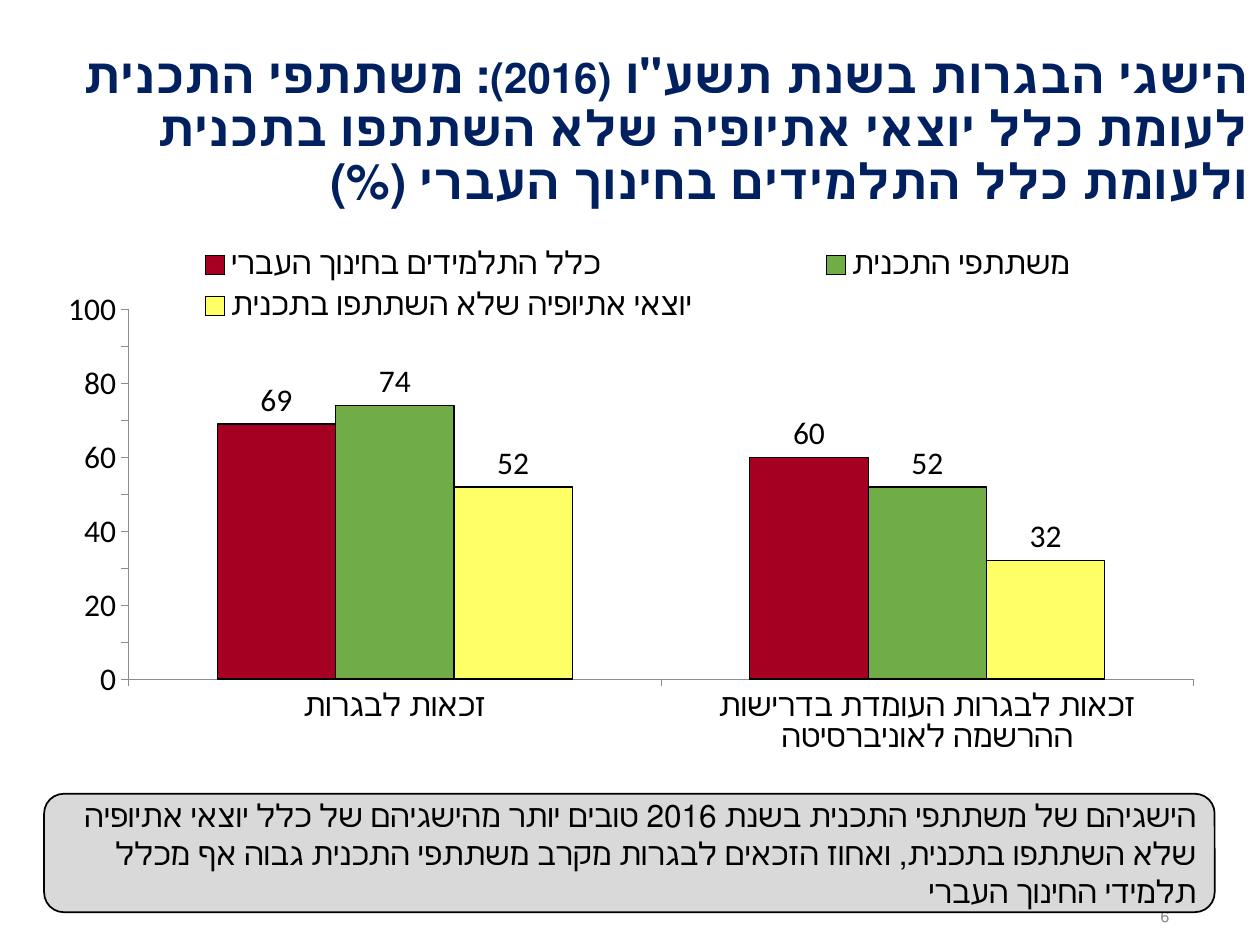
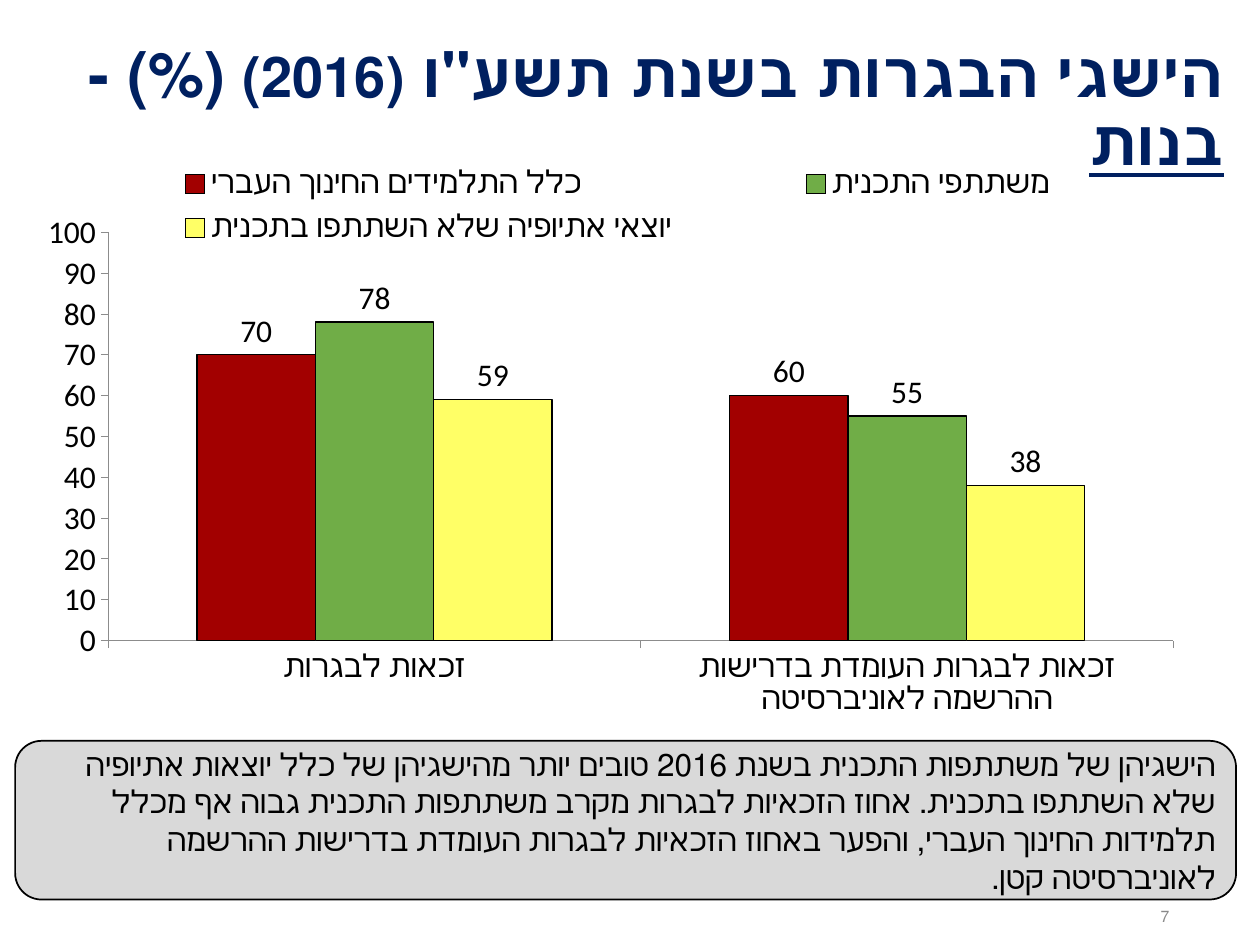
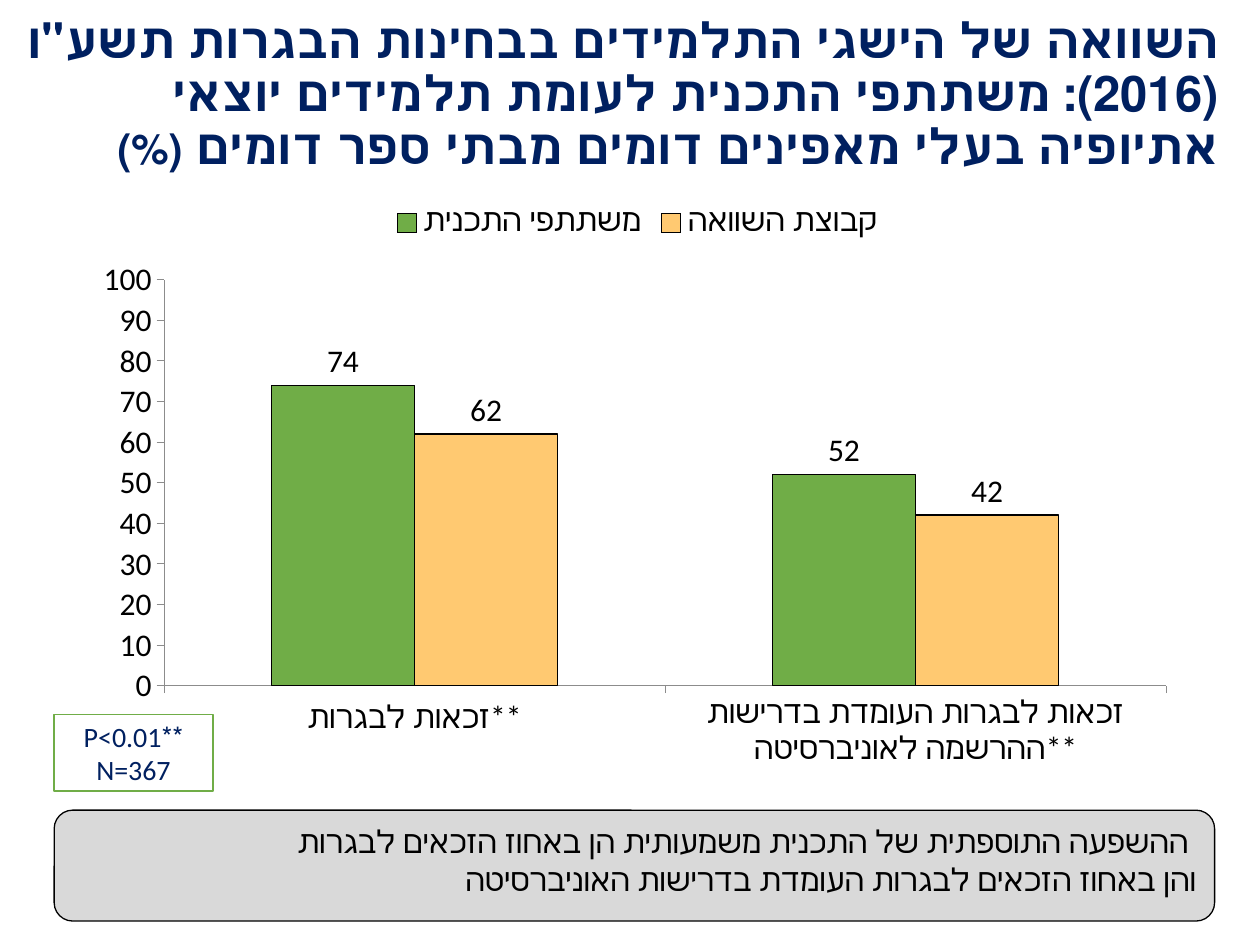
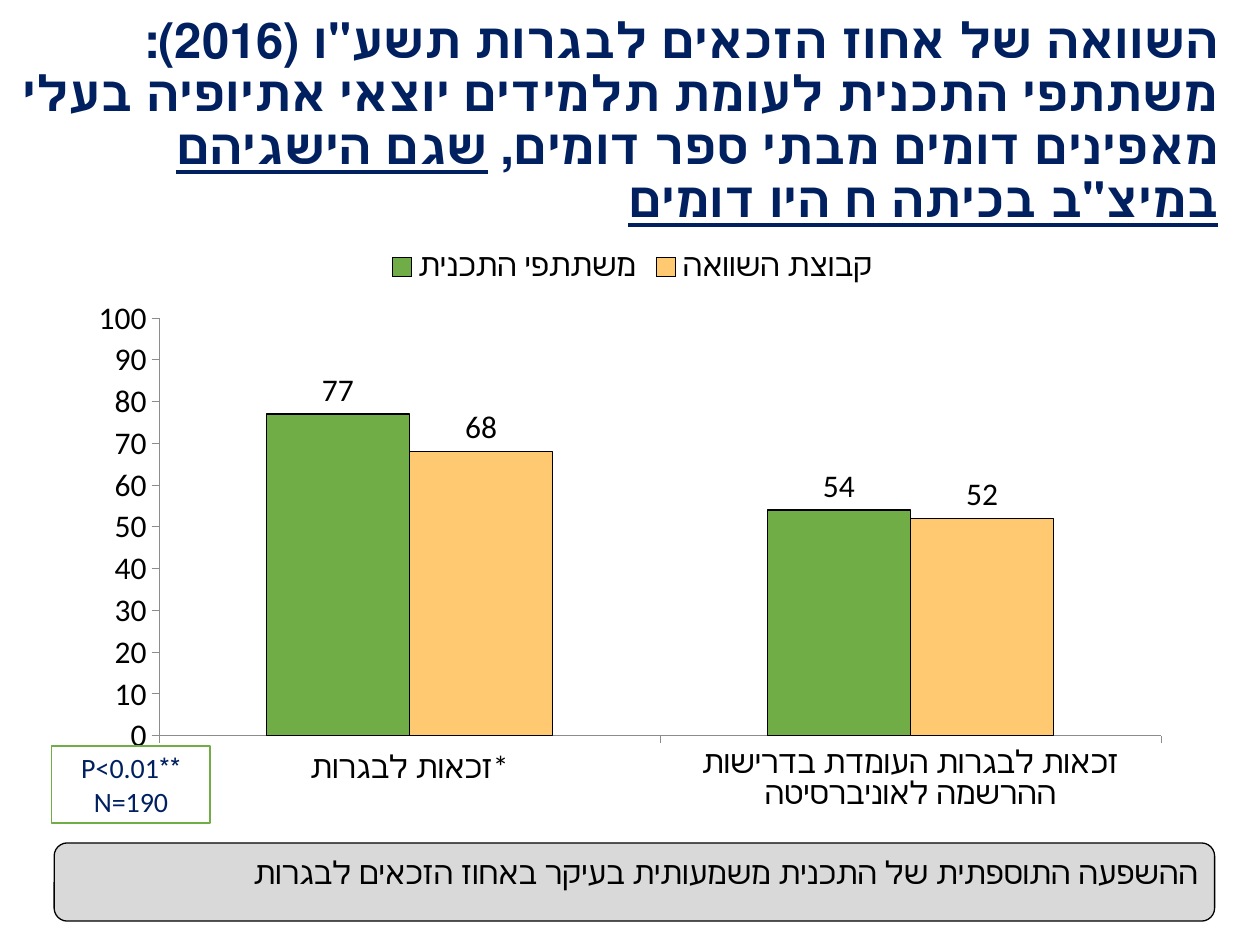
from dataclasses import dataclass
from typing import NamedTuple

from pptx import Presentation
from pptx.chart.data import CategoryChartData
from pptx.dml.color import RGBColor
from pptx.enum.chart import XL_CHART_TYPE as ChartType
from pptx.enum.chart import XL_LABEL_POSITION as LabelPosition
from pptx.enum.chart import XL_LEGEND_POSITION as LegendPosition
from pptx.enum.chart import XL_TICK_MARK as TickMark
from pptx.enum.lang import MSO_LANGUAGE_ID as Language
from pptx.enum.shapes import MSO_SHAPE as Preset
from pptx.enum.text import MSO_ANCHOR as Anchor
from pptx.enum.text import PP_ALIGN as Align
from pptx.oxml import parse_xml
from pptx.oxml.ns import nsdecls, qn
from pptx.util import Emu, Pt

EMU_PER_PX = 9144


def px(length: int) -> Emu:
    return Emu(length * EMU_PER_PX)


@dataclass(frozen=True)
class Style:
    size: int
    face: str
    color: str
    bold: bool = False


@dataclass(frozen=True)
class Theme:
    navy: str = "002060"
    black: str = "000000"
    white: str = "FFFFFF"
    gray: str = "D9D9D9"
    axis: str = "8C8C8C"
    faint: str = "898989"
    crimson: str = "A50021"
    red: str = "A20000"
    green: str = "70AD47"
    yellow: str = "FFFF66"
    orange: str = "FFC971"
    title_face: str = "Times New Roman"
    body_face: str = "Calibri"
    number_face: str = "Arial"
    title_size: int = 28
    body_size: int = 18
    note_size: int = 16
    number_size: int = 9


THEME = Theme()
BODY = Style(THEME.body_size, THEME.body_face, THEME.black)
CLOSING = Style(THEME.body_size, THEME.title_face, THEME.black)
NOTE = Style(THEME.note_size, THEME.body_face, THEME.navy)
NUMBER = Style(THEME.number_size, THEME.number_face, THEME.faint)


class Area(NamedTuple):
    left: int
    top: int
    width: int
    height: int

    def emu(self) -> list[Emu]:
        return [px(length) for length in self]


class Layout(NamedTuple):
    x: float
    y: float
    w: float
    h: float


class Span(NamedTuple):
    text: str
    size: int = THEME.title_size
    underline: bool = False


class Series(NamedTuple):
    name: str
    values: tuple[int, ...]
    color: str


class Bars(NamedTuple):
    area: Area
    plot: Layout
    categories: tuple[str, ...]
    series: tuple[Series, ...]
    legend: Layout | None = None


class Panel(NamedTuple):
    area: Area
    paragraphs: tuple[str, ...]
    style: Style
    preset: Preset = Preset.ROUNDED_RECTANGLE
    fill: str = THEME.gray
    line: str = THEME.black
    line_width: float = 1
    align: Align = Align.RIGHT
    anchor: Anchor = Anchor.MIDDLE
    rtl: bool = True
    wrap: bool = True


class Page(NamedTuple):
    title_area: Area
    title: tuple[Span, ...]
    bars: Bars
    panels: tuple[Panel, ...]
    number: str = ""


def rgb(color: str) -> RGBColor:
    return RGBColor.from_string(color)


def style_font(font, style: Style) -> None:
    font.size = Pt(style.size)
    font.bold = style.bold
    font.color.rgb = rgb(style.color)
    font.name = style.face
    font.language_id = Language.HEBREW


def set_direction(para, align: Align, rtl: bool) -> None:
    para.alignment = align
    para._p.get_or_add_pPr().set("rtl", "1" if rtl else "0")


def add_span(para, text: str, style: Style, underline: bool = False) -> None:
    span = para.add_run()
    span.text = text
    if underline:
        span.font.underline = True
    style_font(span.font, style)


def add_title(slide, area: Area, spans: tuple[Span, ...]) -> None:
    frame = slide.shapes.add_textbox(*area.emu()).text_frame
    frame.word_wrap = True
    para = frame.paragraphs[0]
    set_direction(para, Align.RIGHT, True)
    para.line_spacing = 0.9
    for span in spans:
        style = Style(span.size, THEME.title_face, THEME.navy, True)
        add_span(para, span.text, style, span.underline)


def add_number(slide, number: str) -> None:
    frame = slide.shapes.add_textbox(*Area(713, 707, 225, 40).emu()).text_frame
    frame.word_wrap = True
    frame.vertical_anchor = Anchor.MIDDLE
    set_direction(frame.paragraphs[0], Align.RIGHT, True)
    add_span(frame.paragraphs[0], number, NUMBER)


def add_panel(slide, panel: Panel) -> None:
    box = slide.shapes.add_shape(panel.preset, *panel.area.emu())
    box.shadow.inherit = False
    box.fill.solid()
    box.fill.fore_color.rgb = rgb(panel.fill)
    box.line.color.rgb = rgb(panel.line)
    box.line.width = Pt(panel.line_width)
    frame = box.text_frame
    frame.word_wrap = panel.wrap
    frame.vertical_anchor = panel.anchor
    for index, text in enumerate(panel.paragraphs):
        para = frame.add_paragraph() if index else frame.paragraphs[0]
        set_direction(para, panel.align, panel.rtl)
        add_span(para, text, panel.style)


def layout_xml(layout: Layout, inner: bool):
    target = '<c:layoutTarget val="inner"/>' if inner else ""
    modes = "".join(f'<c:{side}Mode val="edge"/>' for side in "xy")
    sizes = "".join(f'<c:{side} val="{value}"/>' for side, value in layout._asdict().items())
    return parse_xml(
        f'<c:layout {nsdecls("c")}><c:manualLayout>{target}{modes}{sizes}</c:manualLayout></c:layout>'
    )


def place_plot(chart, layout: Layout) -> None:
    plot_area = chart._chartSpace.chart.plotArea
    for old in plot_area.findall(qn("c:layout")):
        plot_area.remove(old)
    plot_area.insert(0, layout_xml(layout, True))


def place_legend(chart, layout: Layout) -> None:
    legend = chart.legend._element
    for old in legend.findall(qn("c:layout")):
        legend.remove(old)
    legend.find(qn("c:legendPos")).addnext(layout_xml(layout, False))


def style_axis(axis) -> None:
    axis.has_major_gridlines = False
    axis.major_tick_mark = TickMark.OUTSIDE
    axis.minor_tick_mark = TickMark.NONE
    axis.format.line.color.rgb = rgb(THEME.axis)
    axis.format.line.width = Pt(0.5)
    style_font(axis.tick_labels.font, BODY)


def add_bars(slide, bars: Bars) -> None:
    data = CategoryChartData(number_format="General")
    data.categories = bars.categories
    for series in bars.series:
        data.add_series(series.name, series.values)
    chart = slide.shapes.add_chart(ChartType.COLUMN_CLUSTERED, *bars.area.emu(), data).chart
    chart.has_title = False
    style_font(chart.font, BODY)

    style_axis(chart.category_axis)
    style_axis(chart.value_axis)
    chart.value_axis.minimum_scale = 0
    chart.value_axis.maximum_scale = 100
    chart.value_axis.major_unit = 10

    plot = chart.plots[0]
    plot.gap_width = 150
    plot.overlap = 0
    plot.vary_by_categories = False
    for drawn, series in zip(plot.series, bars.series):
        drawn.format.fill.solid()
        drawn.format.fill.fore_color.rgb = rgb(series.color)
        drawn.format.line.color.rgb = rgb(THEME.black)
        drawn.format.line.width = Pt(0.75)
        labels = drawn.data_labels
        labels.show_value = True
        labels.position = LabelPosition.OUTSIDE_END
        style_font(labels.font, BODY)

    chart.has_legend = True
    chart.legend.position = LegendPosition.TOP
    chart.legend.include_in_layout = False
    style_font(chart.legend.font, BODY)
    place_plot(chart, bars.plot)
    if bars.legend:
        place_legend(chart, bars.legend)


def significance(left: int, top: int, count: int) -> Panel:
    return Panel(
        Area(left, top, 126, 61), ("**P<0.01", f"N={count}"), NOTE,
        Preset.RECTANGLE, THEME.white, THEME.green, align=Align.CENTER,
    )


def closing(top: int, height: int, *paragraphs: str) -> Panel:
    return Panel(
        Area(43, top, 921, height), paragraphs, CLOSING,
        line_width=0.75, anchor=Anchor.TOP, rtl=False, wrap=False,
    )


def program_series(all_name: str, all_color: str, everyone: tuple[int, ...],
                   program: tuple[int, ...], others: tuple[int, ...]) -> tuple[Series, ...]:
    return (
        Series(all_name, everyone, all_color),
        Series(PROGRAM, program, THEME.green),
        Series("יוצאי אתיופיה שלא השתתפו בתכנית", others, THEME.yellow),
    )


def matched_series(program: tuple[int, ...], matched: tuple[int, ...]) -> tuple[Series, ...]:
    return (
        Series(PROGRAM, program, THEME.green),
        Series("קבוצת השוואה", matched, THEME.orange),
    )


PROGRAM = "משתתפי התכנית"
DIPLOMA = "זכאות לבגרות"
UNIVERSITY = "זכאות לבגרות העומדת בדרישות ההרשמה לאוניברסיטה"
WIDE_LEGEND = Layout(0.03, 0.02, 0.95, 0.17)
MATCHED_TITLE = Area(-9, 8, 986, 94)

PAGES = (
    Page(
        Area(23, 36, 977, 123),
        (
            Span("הישגי הבגרות בשנת תשע\"ו "),
            Span("(2016)", 24),
            Span(": משתתפי התכנית לעומת כלל יוצאי אתיופיה שלא השתתפו בתכנית "
                 "ולעומת כלל התלמידים בחינוך העברי (%)"),
        ),
        Bars(
            Area(37, 182, 929, 425), Layout(0.07, 0.15, 0.91, 0.69), (DIPLOMA, UNIVERSITY),
            program_series("כלל התלמידים בחינוך העברי", THEME.crimson, (69, 60), (74, 52), (52, 32)),
            WIDE_LEGEND,
        ),
        (
            Panel(
                Area(35, 630, 929, 94),
                ("הישגיהם של משתתפי התכנית בשנת 2016 טובים יותר מהישגיהם של כלל יוצאי אתיופיה "
                 "שלא השתתפו בתכנית, ואחוז הזכאים לבגרות מקרב משתתפי התכנית גבוה אף מכלל "
                 "תלמידי החינוך העברי",),
                BODY,
            ),
        ),
        "6",
    ),
    Page(
        Area(4, 29, 977, 63),
        (
            Span("הישגי הבגרות בשנת תשע\"ו ", 36),
            Span("(2016)", 32),
            Span(" (%) - ", 36),
            Span("בנות", 36, True),
        ),
        Bars(
            Area(21, 115, 929, 463), Layout(0.07, 0.15, 0.91, 0.7), (DIPLOMA, UNIVERSITY),
            program_series("כלל התלמידים החינוך העברי", THEME.red, (70, 60), (78, 55), (59, 38)),
            WIDE_LEGEND,
        ),
        (
            Panel(
                Area(12, 588, 969, 126),
                ("הישגיהן של משתתפות התכנית בשנת 2016 טובים יותר מהישגיהן של כלל יוצאות אתיופיה "
                 "שלא השתתפו בתכנית. אחוז הזכאיות לבגרות מקרב משתתפות התכנית גבוה אף מכלל "
                 "תלמידות החינוך העברי, והפער באחוז הזכאיות לבגרות העומדת בדרישות ההרשמה "
                 "לאוניברסיטה קטן.",),
                BODY,
            ),
        ),
        "7",
    ),
    Page(
        MATCHED_TITLE,
        (
            Span("השוואה של הישגי התלמידים בבחינות הבגרות תשע\"ו (2016): משתתפי התכנית לעומת "
                 "תלמידים יוצאי אתיופיה בעלי מאפינים דומים מבתי ספר דומים "),
            Span("(%)", 24),
        ),
        Bars(
            Area(69, 152, 874, 467), Layout(0.07, 0.15, 0.91, 0.69),
            (f"{DIPLOMA}**", f"{UNIVERSITY}**"), matched_series((74, 52), (62, 42)),
        ),
        (
            significance(43, 567, 367),
            closing(
                643, 88,
                "ההשפעה התוספתית של התכנית משמעותית הן באחוז הזכאים לבגרות ",
                "והן באחוז הזכאים לבגרות העומדת בדרישות האוניברסיטה",
            ),
        ),
    ),
    Page(
        MATCHED_TITLE,
        (
            Span("השוואה של אחוז הזכאים לבגרות תשע\"ו (2016): משתתפי התכנית לעומת תלמידים "
                 "יוצאי אתיופיה בעלי מאפינים דומים מבתי ספר דומים, "),
            Span("שגם הישגיהם במיצ\"ב בכיתה ח היו דומים", underline=True),
        ),
        Bars(
            Area(65, 187, 874, 467), Layout(0.07, 0.14, 0.91, 0.71),
            (f"{DIPLOMA}*", UNIVERSITY), matched_series((77, 54), (68, 52)),
        ),
        (
            significance(41, 592, 190),
            closing(669, 62, "ההשפעה התוספתית של התכנית משמעותית בעיקר באחוז הזכאים לבגרות"),
        ),
    ),
)


def main() -> None:
    deck = Presentation()
    deck.slide_width, deck.slide_height = px(1000), px(750)
    for page in PAGES:
        slide = deck.slides.add_slide(deck.slide_layouts[6])
        add_title(slide, page.title_area, page.title)
        add_bars(slide, page.bars)
        if page.number:
            add_number(slide, page.number)
        for panel in page.panels:
            add_panel(slide, panel)
    deck.save("out.pptx")


if __name__ == "__main__":
    main()
